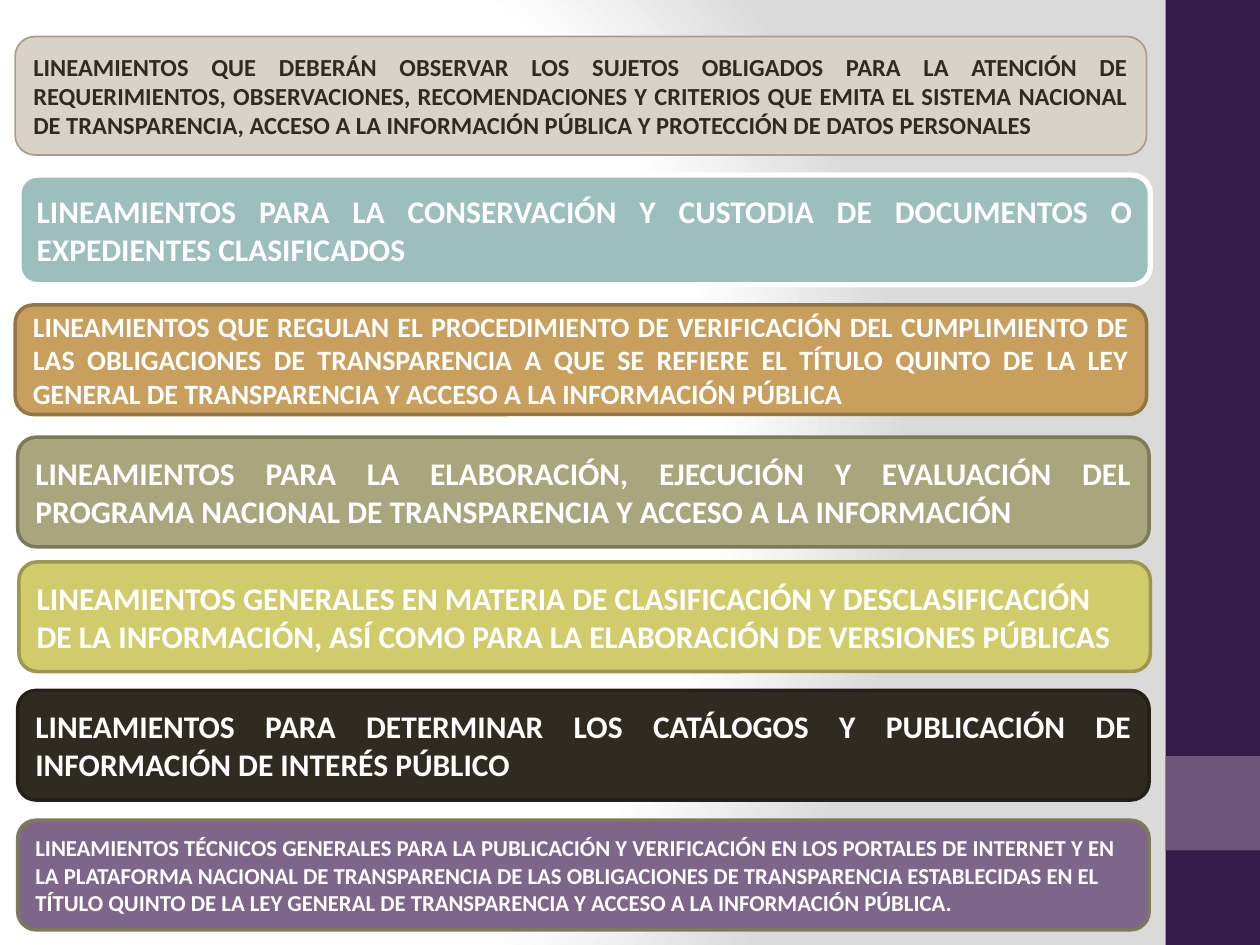
from dataclasses import dataclass

from lxml import etree
from pptx import Presentation
from pptx.dml.color import RGBColor
from pptx.enum import shapes, text
from pptx.oxml.ns import qn
from pptx.util import Inches, Pt


@dataclass(frozen=True)
class Theme:
    font: str = "Calibri"
    white: str = "FFFFFF"
    grey: str = "DADADA"
    dark: str = "2F2B20"
    purple: str = "341A46"
    mauve: str = "6C5578"
    large: int = 18
    medium: int = 16
    small: int = 14
    tiny: int = 13


@dataclass(frozen=True)
class Guideline:
    left: float
    top: float
    fill: str
    line: str
    label: str
    size: int = Theme.large
    color: str = Theme.white
    height: float = 0.87
    weight: float = 2
    align: text.PP_ALIGN = text.PP_ALIGN.JUSTIFY


T = Theme()
BOX_WIDTH = 8.98
LEFT = text.PP_ALIGN.LEFT

GUIDELINES = [
    Guideline(0.12, 0.29, "D9D2C9", "AE9D85",
              "LINEAMIENTOS QUE DEBERÁN OBSERVAR LOS SUJETOS OBLIGADOS PARA LA ATENCIÓN DE "
              "REQUERIMIENTOS, OBSERVACIONES, RECOMENDACIONES Y CRITERIOS QUE EMITA EL SISTEMA "
              "NACIONAL DE TRANSPARENCIA, ACCESO A LA INFORMACIÓN PÚBLICA Y PROTECCIÓN DE DATOS "
              "PERSONALES", size=T.small, color=T.dark, height=0.94, weight=1),
    Guideline(0.15, 1.39, "9CBEBD", T.white,
              "LINEAMIENTOS PARA LA CONSERVACIÓN Y CUSTODIA DE DOCUMENTOS O EXPEDIENTES "
              "CLASIFICADOS", weight=3),
    Guideline(0.12, 2.42, "C89F5D", "947645",
              "LINEAMIENTOS QUE REGULAN EL PROCEDIMIENTO DE VERIFICACIÓN DEL CUMPLIMIENTO DE LAS "
              "OBLIGACIONES DE TRANSPARENCIA A QUE SE REFIERE EL TÍTULO QUINTO DE LA LEY GENERAL "
              "DE TRANSPARENCIA Y ACCESO A LA INFORMACIÓN PÚBLICA", size=T.medium),
    Guideline(0.14, 3.47, "A9A57C", "7D7A5C",
              "LINEAMIENTOS PARA LA ELABORACIÓN, EJECUCIÓN Y EVALUACIÓN DEL PROGRAMA NACIONAL DE "
              "TRANSPARENCIA Y ACCESO A LA INFORMACIÓN"),
    Guideline(0.15, 4.46, "D2CB6C", "9B9650",
              "LINEAMIENTOS GENERALES EN MATERIA DE CLASIFICACIÓN Y DESCLASIFICACIÓN DE LA "
              "INFORMACIÓN, ASÍ COMO PARA LA ELABORACIÓN DE VERSIONES PÚBLICAS", align=LEFT),
    Guideline(0.14, 5.48, T.dark, "232018",
              "LINEAMIENTOS PARA DETERMINAR LOS CATÁLOGOS Y PUBLICACIÓN DE INFORMACIÓN DE INTERÉS "
              "PÚBLICO"),
    Guideline(0.14, 6.51, "7E668A", "7D7A5C",
              "LINEAMIENTOS TÉCNICOS GENERALES PARA LA PUBLICACIÓN Y VERIFICACIÓN EN LOS PORTALES "
              "DE INTERNET Y EN LA PLATAFORMA NACIONAL DE TRANSPARENCIA DE LAS OBLIGACIONES DE "
              "TRANSPARENCIA ESTABLECIDAS EN EL TÍTULO QUINTO DE LA LEY GENERAL DE TRANSPARENCIA Y "
              "ACCESO A LA INFORMACIÓN PÚBLICA.", size=T.tiny, align=LEFT),
]


def set_background(s) -> None:
    """Radial gradient, white at the centre and grey at the edge."""
    s.background.fill.solid()
    solid = s.element.find(".//" + qn("a:solidFill"))
    grad = etree.Element(qn("a:gradFill"), rotWithShape="1")
    stops = etree.SubElement(grad, qn("a:gsLst"))
    for pos, color in ((0, T.white), (75, T.white), (100, T.grey)):
        stop = etree.SubElement(stops, qn("a:gs"), pos=str(pos * 1000))
        etree.SubElement(stop, qn("a:srgbClr"), val=color)
    circle = etree.SubElement(grad, qn("a:path"), path="circle")
    etree.SubElement(circle, qn("a:fillToRect"), l="20000", t="50000", r="100000", b="50000")
    solid.getparent().replace(solid, grad)


def add_block(s, kind, left: float, top: float, width: float, height: float, fill: str):
    sp = s.shapes.add_shape(kind, Inches(left), Inches(top), Inches(width), Inches(height))
    sp.shadow.inherit = False
    sp.fill.solid()
    sp.fill.fore_color.rgb = RGBColor.from_string(fill)
    sp.line.fill.background()
    return sp


def add_guideline(s, g: Guideline) -> None:
    sp = add_block(s, shapes.MSO_SHAPE.ROUNDED_RECTANGLE, g.left, g.top, BOX_WIDTH, g.height, g.fill)
    sp.line.color.rgb = RGBColor.from_string(g.line)
    sp.line.width = Pt(g.weight)
    tf = sp.text_frame
    tf.word_wrap = True
    tf.vertical_anchor = text.MSO_ANCHOR.MIDDLE
    p = tf.paragraphs[0]
    p.alignment = g.align
    r = p.add_run()
    r.text = g.label
    for name, value in {"name": T.font, "size": Pt(g.size), "bold": True}.items():
        setattr(r.font, name, value)
    r.font.color.rgb = RGBColor.from_string(g.color)


def main() -> None:
    prs = Presentation()
    prs.slide_width, prs.slide_height = Inches(10), Inches(7.5)
    s = prs.slides.add_slide(prs.slide_layouts[6])
    set_background(s)
    for top, height, fill in ((0, 7.5, T.purple), (6, 0.75, T.mauve)):
        add_block(s, shapes.MSO_SHAPE.RECTANGLE, 9.25, top, 0.75, height, fill)
    for guideline in GUIDELINES:
        add_guideline(s, guideline)
    prs.save("out.pptx")


if __name__ == "__main__":
    main()
